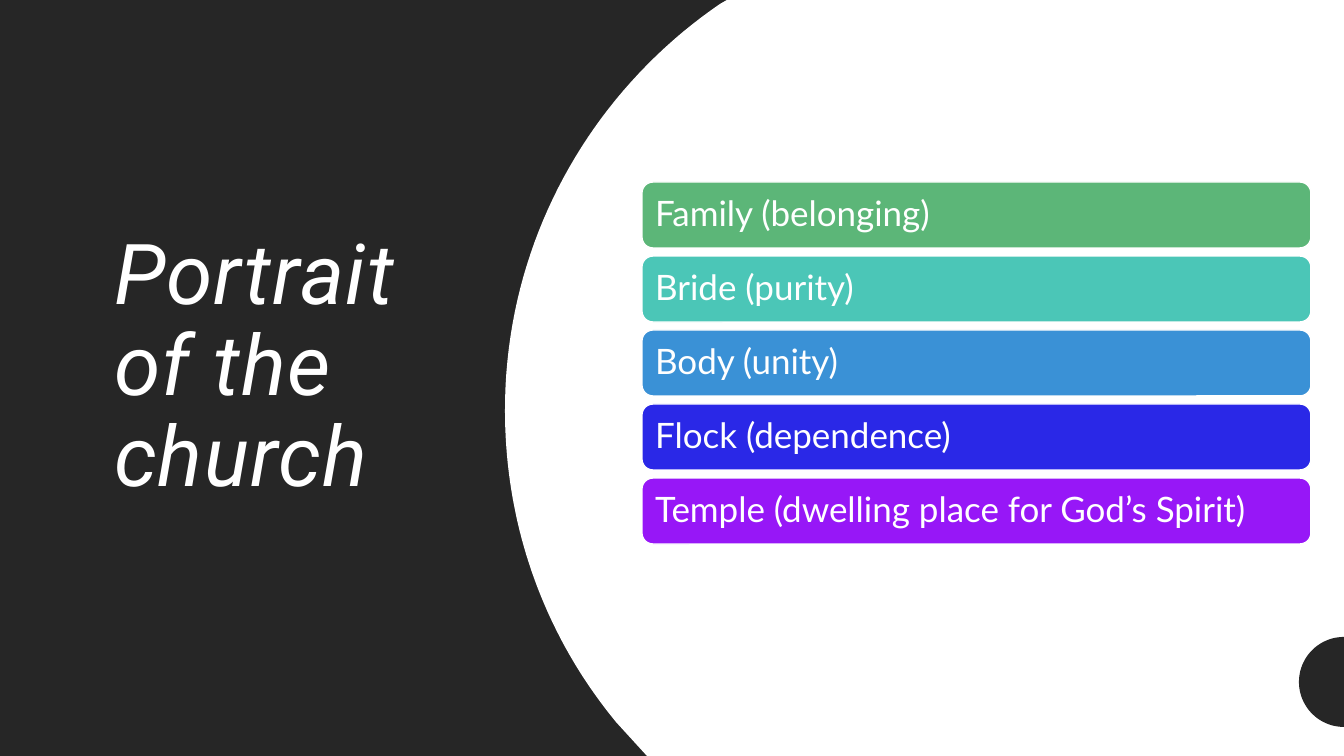
import math
import pptx
import pptx.util
import pptx.dml.color
import pptx.enum.shapes
import pptx.enum.text

SCALE = 914400 / 100.8  # EMU in one px
THEME = {
    "dark": "262626", "white": "FFFFFF",
    "bars": ["5CB678", "4BC6B7", "3A91D6", "2A28E7", "9717F7"],
    "head": ("Roboto", 60), "body": ("Lato", 25),
}


def paint(shape, color, edge=None):
    """Set a flat fill, an optional 1 pt edge and no shadow."""
    shape.shadow.inherit = False
    shape.fill.solid()
    shape.fill.fore_color.rgb = pptx.dml.color.RGBColor.from_string(color)
    if edge:
        shape.line.color.rgb = pptx.dml.color.RGBColor.from_string(edge)
        shape.line.width = pptx.util.Pt(1)
    else:
        shape.line.fill.background()


def write(shape, text, face, italic=False, track=0, indent=0, after=0, inset=(10, 5)):
    frame = shape.text_frame
    frame.word_wrap = True
    frame.auto_size = pptx.enum.text.MSO_AUTO_SIZE.NONE
    frame.vertical_anchor = pptx.enum.text.MSO_ANCHOR.MIDDLE
    frame.margin_left = frame.margin_right = round(inset[0] * SCALE)
    frame.margin_top = frame.margin_bottom = round(inset[1] * SCALE)
    para = frame.paragraphs[0]
    para.alignment = pptx.enum.text.PP_ALIGN.LEFT
    para.line_spacing = 0.9
    para.space_before = pptx.util.Pt(0)
    para.space_after = pptx.util.Pt(after)
    props = para._p.get_or_add_pPr()
    props.set("marL", str(round(indent * SCALE)))
    props.set("indent", "0")
    run = para.add_run()
    run.text = text
    run.font.name, size = face
    run.font.size = pptx.util.Pt(size)
    run.font.italic = italic
    run.font.color.rgb = pptx.dml.color.RGBColor.from_string(THEME["white"])
    if track:
        run.font._element.set("spc", str(track * 100))


deck = pptx.Presentation()
deck.slide_width = round(1344 * SCALE)
deck.slide_height = round(756 * SCALE)
slide = deck.slides.add_slide(deck.slide_layouts[5])
shapes = slide.shapes
kinds = pptx.enum.shapes.MSO_SHAPE

# Dark backdrop
back = shapes.add_shape(kinds.RECTANGLE, 0, 0, deck.slide_width, deck.slide_height)
paint(back, THEME["dark"])

# Title, brought in front of the backdrop
title = shapes.title
title.left, title.top, title.width, title.height = [
    round(n * SCALE) for n in (84, 117, 373, 503)]
write(title, "Portrait of the church", THEME["head"], italic=True, track=1, indent=20, after=4)
back.element.addnext(title.element)

# White panel with a curved left edge, sampled from two Bezier arcs
arcs = [
    [(616, 722), (546, 637), (505, 529), (505, 410)],
    [(505, 410), (505, 242), (590, 93), (720, 4)],
]
panel = [(727, 0), (1344, 0), (1344, 756), (647, 756)]
for arc in arcs:
    for step in range(41):
        t = step / 40
        blend = [(1 - t) ** 3, 3 * t * (1 - t) ** 2, 3 * t ** 2 * (1 - t), t ** 3]
        panel.append(tuple(sum(b * p[axis] for b, p in zip(blend, arc)) for axis in (0, 1)))

# Half disc at the right edge
disc = []
for turn in range(90, 271, 4):
    angle = math.radians(turn)
    disc.append((1344 + 45 * math.cos(angle), 682 - 45 * math.sin(angle)))
disc.append((1344, 727))

for points, color in ((panel, THEME["white"]), (disc, THEME["dark"])):
    pen = shapes.build_freeform(*[round(n * SCALE) for n in points[0]])
    pen.add_line_segments([(round(x * SCALE), round(y * SCALE)) for x, y in points[1:]])
    paint(pen.convert_to_shape(), color)

# Bars
labels = [
    "Family (belonging)",
    "Bride (purity)",
    "Body (unity)",
    "Flock (dependence)",
    "Temple (dwelling place for God’s Spirit)",
]
for row, (label, color) in enumerate(zip(labels, THEME["bars"])):
    box = [round(n * SCALE) for n in (642, 182 + 74 * row, 669, 66)]
    bar = shapes.add_shape(kinds.ROUNDED_RECTANGLE, *box)
    paint(bar, color, edge=THEME["white"])
    write(bar, label, THEME["body"], inset=(10, 10))

deck.save("out.pptx")
